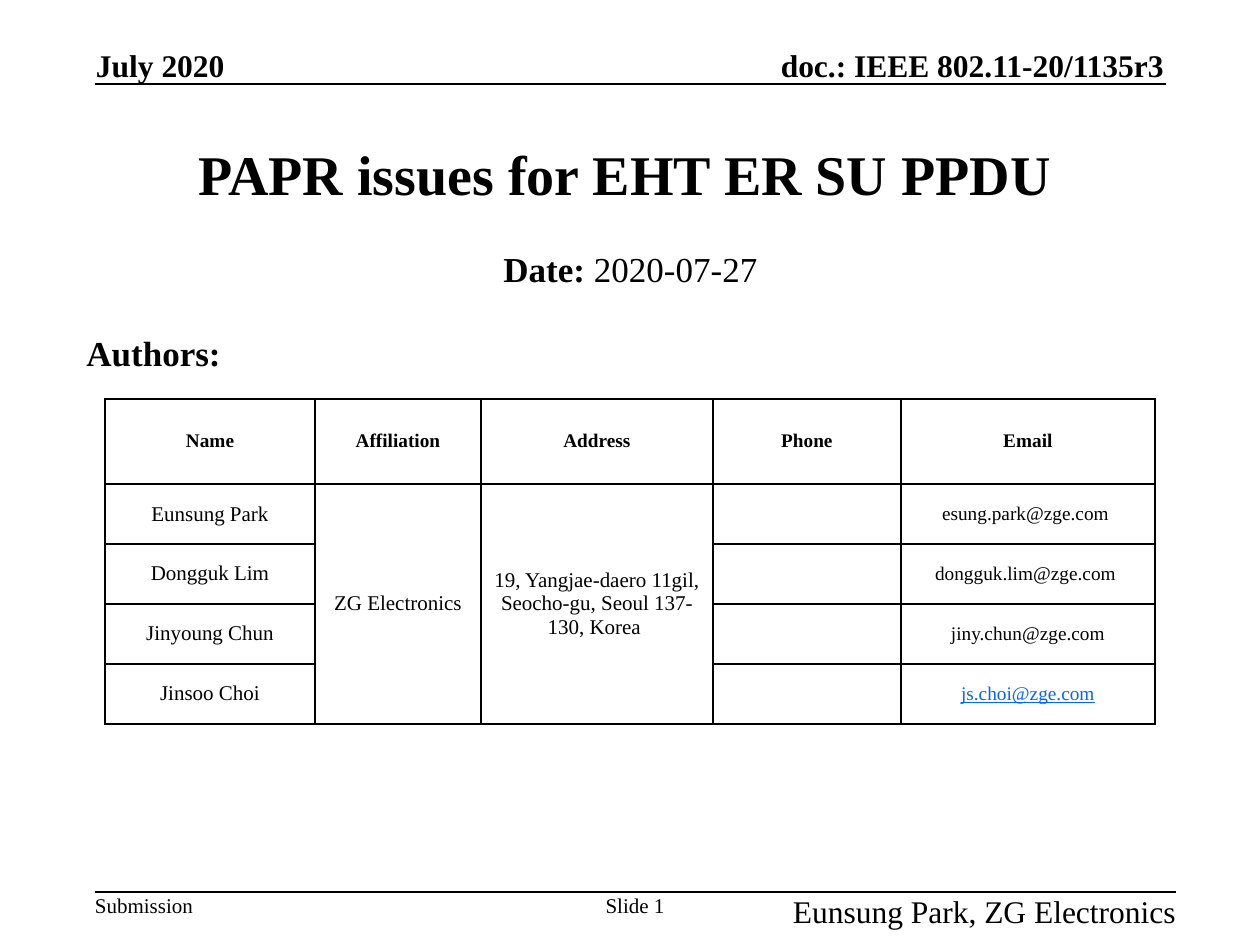
from dataclasses import dataclass

from lxml import etree
from pptx import Presentation
from pptx.dml.color import RGBColor
from pptx.enum.shapes import MSO_CONNECTOR
from pptx.enum.text import MSO_ANCHOR, MSO_AUTO_SIZE, PP_ALIGN
from pptx.oxml.ns import qn
from pptx.util import Emu, Pt

LEFT, CENTER, RIGHT = PP_ALIGN.LEFT, PP_ALIGN.CENTER, PP_ALIGN.RIGHT
TOP, MIDDLE, BOTTOM = MSO_ANCHOR.TOP, MSO_ANCHOR.MIDDLE, MSO_ANCHOR.BOTTOM
FIT_SHAPE = MSO_AUTO_SIZE.SHAPE_TO_FIT_TEXT
STRAIGHT = MSO_CONNECTOR.STRAIGHT
EMU_PER_PX = 914400 / 126


@dataclass(frozen=True)
class Theme:
    """Hold the colours, font and type sizes of the slide."""
    font: str = "Times New Roman"
    ink: str = "000000"
    paper: str = "FFFFFF"
    link: str = "0066FF"
    title: int = 32
    subtitle: int = 20
    header: int = 18
    footer: int = 12
    cell: int = 12
    small_cell: int = 11
    rule: int = 1


THEME = Theme()
COLUMN_WIDTHS = (210, 166, 232, 188, 254)
ROW_HEIGHTS = (85, 60, 60, 60, 60)
HEADINGS = ("Name", "Affiliation", "Address", "Phone", "Email")
AFFILIATION = "ZG Electronics"
ADDRESS = "19, Yangjae-daero 11gil, Seocho-gu, Seoul 137-130, Korea "
AUTHORS = (
    ("Eunsung Park", "esung.park@zge.com "),
    ("Dongguk Lim", "dongguk.lim@zge.com "),
    ("Jinyoung Chun", "jiny.chun@zge.com"),
    ("Jinsoo Choi", "js.choi@zge.com"),
)


def px(length):
    """Turn pixels into EMU."""
    return Emu(round(length * EMU_PER_PX))


def add_run(paragraph, text, size, bold=False, color=THEME.ink, underline=False):
    """Add one formatted run to a paragraph."""
    run = paragraph.add_run()
    run.text = text
    font = run.font
    font.name, font.size, font.bold = THEME.font, Pt(size), bold
    font.color.rgb = RGBColor.from_string(color)
    if underline:
        font.underline = True


def add_text(slide, box, runs, size, align=LEFT, anchor=TOP):
    """Add a wrapping text box of (text, bold) runs and return its frame."""
    frame = slide.shapes.add_textbox(*map(px, box)).text_frame
    frame.word_wrap = True
    frame.vertical_anchor = anchor
    paragraph = frame.paragraphs[0]
    paragraph.alignment = align
    for text, bold in runs:
        add_run(paragraph, text, size, bold)
    return frame


def add_margin_text(slide, box, text, size, bold=False, align=LEFT, anchor=TOP):
    """Add a tight one-line header or footer text."""
    frame = add_text(slide, box, [(text, bold)], size, align, anchor)
    frame.margin_left = frame.margin_right = 0
    frame.margin_top = frame.margin_bottom = 0
    frame.word_wrap = False
    frame.auto_size = FIT_SHAPE


def add_rule(slide, left, right, y):
    """Add a horizontal rule."""
    rule = slide.shapes.add_connector(STRAIGHT, px(left), px(y), px(right), px(y))
    rule.line.color.rgb = RGBColor.from_string(THEME.ink)
    rule.line.width = Pt(THEME.rule)
    etree.SubElement(rule._element.spPr, qn("a:effectLst"))


def style_cell(cell):
    """Give a cell its borders, fill and anchor."""
    properties = cell._tc.get_or_add_tcPr()
    for side in ("a:lnL", "a:lnR", "a:lnT", "a:lnB"):
        border = etree.SubElement(properties, qn(side), w=str(Pt(THEME.rule)))
        fill = etree.SubElement(border, qn("a:solidFill"))
        etree.SubElement(fill, qn("a:srgbClr"), val=THEME.ink)
    cell.fill.solid()
    cell.fill.fore_color.rgb = RGBColor.from_string(THEME.paper)
    cell.vertical_anchor = MIDDLE


def write_cell(cell, text, size, **style):
    """Write one centred run into a cell."""
    paragraph = cell.text_frame.paragraphs[0]
    paragraph.alignment = CENTER
    add_run(paragraph, text, size, **style)


def add_author_table(slide, left, top):
    """Add the table of authors with shared affiliation and address."""
    table = slide.shapes.add_table(
        len(ROW_HEIGHTS), len(COLUMN_WIDTHS), px(left), px(top),
        px(sum(COLUMN_WIDTHS)), px(sum(ROW_HEIGHTS))).table
    table.first_row = table.horz_banding = False
    for column, width in zip(table.columns, COLUMN_WIDTHS):
        column.width = px(width)
    for index, (row, height) in enumerate(zip(table.rows, ROW_HEIGHTS)):
        row.height = px(height)
        for cell in row.cells:
            style_cell(cell)
            if index:
                cell.margin_left = cell.margin_right = px(9)
                cell.margin_top = cell.margin_bottom = 0
    for column, heading in enumerate(HEADINGS):
        write_cell(table.cell(0, column), heading, THEME.small_cell, bold=True)
    for column, shared in ((1, AFFILIATION), (2, ADDRESS)):
        table.cell(1, column).merge(table.cell(len(AUTHORS), column))
        write_cell(table.cell(1, column), shared, THEME.cell)
    for row, (name, email) in enumerate(AUTHORS, start=1):
        linked = row == len(AUTHORS)
        write_cell(table.cell(row, 0), name, THEME.cell)
        write_cell(table.cell(row, 4), email, THEME.small_cell, underline=linked,
                   color=THEME.link if linked else THEME.ink)


def main():
    """Build the title slide and save it."""
    deck = Presentation()
    deck.slide_width, deck.slide_height = px(1260), px(945)
    slide = deck.slides.add_slide(deck.slide_layouts[6])

    add_margin_text(slide, (704, 46, 460, 38), "doc.: IEEE 802.11-20/1135r3",
                    THEME.header, True, RIGHT, BOTTOM)
    add_rule(slide, 95, 1166, 84)
    add_margin_text(slide, (95, 893, 110, 25), "Submission", THEME.footer)
    add_rule(slide, 95, 1176, 892)
    add_margin_text(slide, (756, 892, 420, 38), f"Eunsung Park, {AFFILIATION}",
                    THEME.header, align=RIGHT)
    add_margin_text(slide, (595, 893, 80, 25), "Slide 1", THEME.footer, align=CENTER)

    add_text(slide, (53, 95, 1144, 157), [("PAPR issues for EHT ER SU PPDU", True)],
             THEME.title, CENTER, MIDDLE)
    add_text(slide, (95, 241, 1071, 53), [("Date:", True), (" 2020-07-27", False)],
             THEME.subtitle, CENTER)
    add_text(slide, (74, 325, 199, 53), [("Authors:", True)], THEME.subtitle)
    add_author_table(slide, 105, 399)
    add_margin_text(slide, (96, 46, 140, 38), "July 2020", THEME.header, True,
                    anchor=BOTTOM)
    deck.save("out.pptx")


if __name__ == "__main__":
    main()
